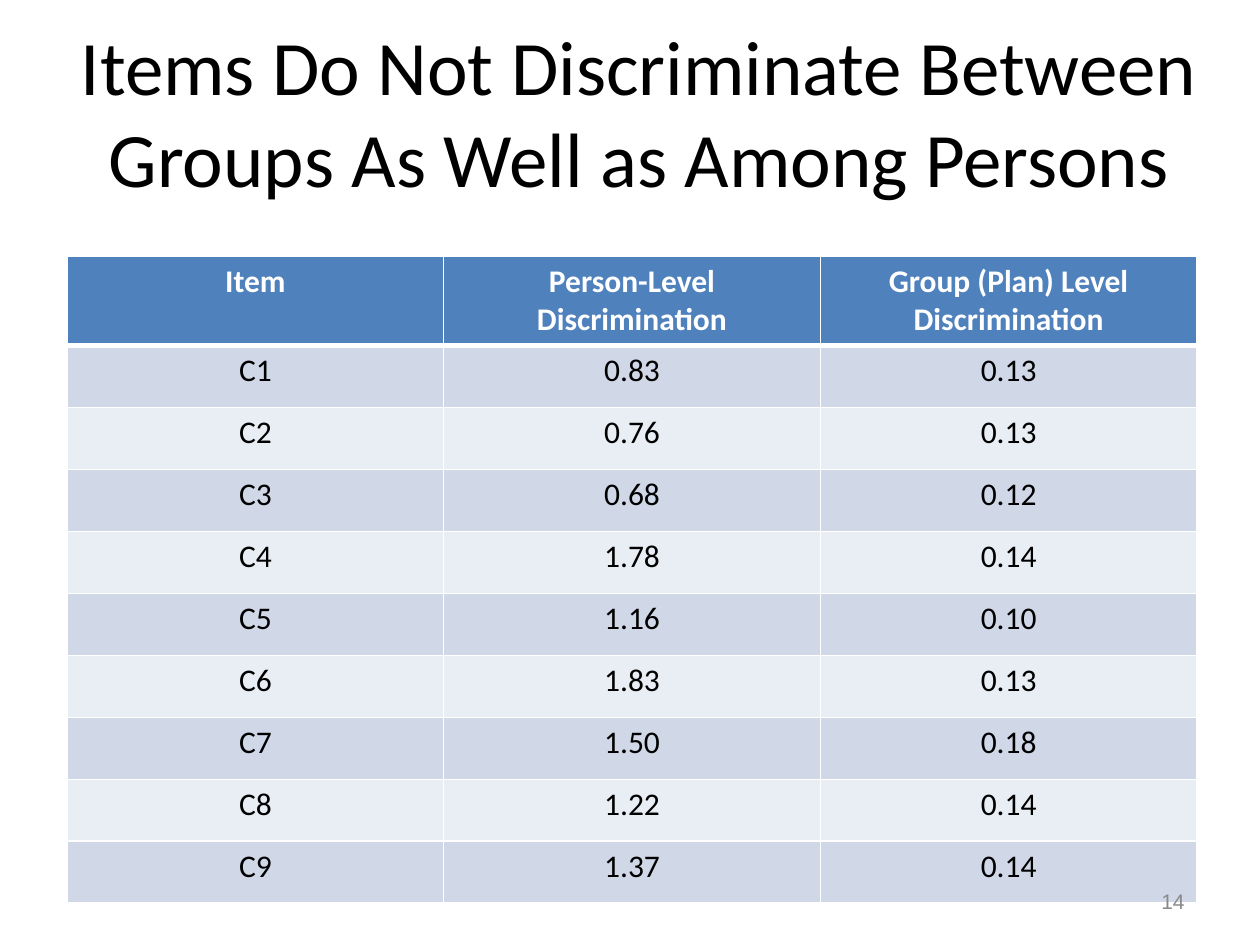
from lxml.etree import SubElement
from pptx import Presentation
from pptx.dml.color import RGBColor
from pptx.enum.text import MSO_ANCHOR, MSO_AUTO_SIZE, PP_ALIGN
from pptx.oxml.ns import qn
from pptx.util import Emu, Pt

PX_PER_INCH = 126
BLACK = RGBColor(0x00, 0x00, 0x00)
WHITE = RGBColor(0xFF, 0xFF, 0xFF)
GRAY = RGBColor(0x89, 0x89, 0x89)
HEADER_BLUE = RGBColor(0x4F, 0x81, 0xBD)
BANDS = (RGBColor(0xE9, 0xED, 0xF4), RGBColor(0xD0, 0xD8, 0xE8))

TITLE = "Items Do Not Discriminate Between Groups As Well as Among Persons"
HEADER = ("Item", "Person-Level Discrimination", "Group (Plan) Level Discrimination")
ITEMS = (
    ("C1", "0.83", "0.13"),
    ("C2", "0.76", "0.13"),
    ("C3", "0.68", "0.12"),
    ("C4", "1.78", "0.14"),
    ("C5", "1.16", "0.10"),
    ("C6", "1.83", "0.13"),
    ("C7", "1.50", "0.18"),
    ("C8", "1.22", "0.14"),
    ("C9", "1.37", "0.14"),
)


def px(length):
    return Emu(round(length * 914400 / PX_PER_INCH))


def write(frame, text, size=18, font="Calibri", color=BLACK, bold=False,
          align=PP_ALIGN.CENTER):
    paragraph = frame.paragraphs[0]
    paragraph.alignment = align
    span = paragraph.add_run()
    span.text = text
    span.font.size = Pt(size)
    span.font.name = font
    span.font.bold = bold
    span.font.color.rgb = color


def set_borders(cell, color=WHITE, bottom=1):
    """Line all four sides at 1 pt, with its own width for the bottom."""
    properties = cell._tc.get_or_add_tcPr()
    widths = {"a:lnL": 1, "a:lnR": 1, "a:lnT": 1, "a:lnB": bottom}
    for position, (side, width) in enumerate(widths.items()):
        line = SubElement(properties, qn(side), w=str(Pt(width)))
        fill = SubElement(line, qn("a:solidFill"))
        SubElement(fill, qn("a:srgbClr"), val=str(color))
        properties.insert(position, line)  # borders come before the cell fill


class SlideBuilder:
    def __init__(self, deck):
        self.page = deck.slides.add_slide(deck.slide_layouts[5])

    def title(self, text, left, top, width, height):
        box = self.page.shapes.title
        box.left, box.top, box.width, box.height = map(px, (left, top, width, height))
        frame = box.text_frame
        frame.word_wrap = True
        frame.auto_size = MSO_AUTO_SIZE.NONE
        frame.vertical_anchor = MSO_ANCHOR.MIDDLE
        write(frame, text, size=44)

    def table(self, rows, left, top, width, header_height, row_height):
        height = header_height + row_height * (len(rows) - 1)
        table = self.page.shapes.add_table(
            len(rows), len(rows[0]), px(left), px(top), px(width), px(height)).table
        for row_index, values in enumerate(rows):
            header = row_index == 0
            table.rows[row_index].height = px(header_height if header else row_height)
            for column_index, value in enumerate(values):
                cell = table.cell(row_index, column_index)
                cell.fill.solid()
                cell.fill.fore_color.rgb = HEADER_BLUE if header else BANDS[row_index % 2]
                set_borders(cell, bottom=3 if header else 1)
                write(cell.text_frame, value, bold=header,
                      color=WHITE if header else BLACK)

    def page_number(self, text, left, top, width, height):
        box = self.page.shapes.add_textbox(*map(px, (left, top, width, height)))
        frame = box.text_frame
        frame.word_wrap = True
        frame.vertical_anchor = MSO_ANCHOR.MIDDLE
        write(frame, text, size=12, font="Arial", color=GRAY, align=PP_ALIGN.RIGHT)


def main():
    deck = Presentation()
    deck.slide_width, deck.slide_height = px(1260), px(945)
    slide = SlideBuilder(deck)
    slide.title(TITLE, 19, 13, 1241, 195)
    slide.table((HEADER, *ITEMS), 67, 256, 1130, header_height=89, row_height=62)
    slide.page_number("14", 903, 876, 294, 50)
    deck.save("out.pptx")


if __name__ == "__main__":
    main()
